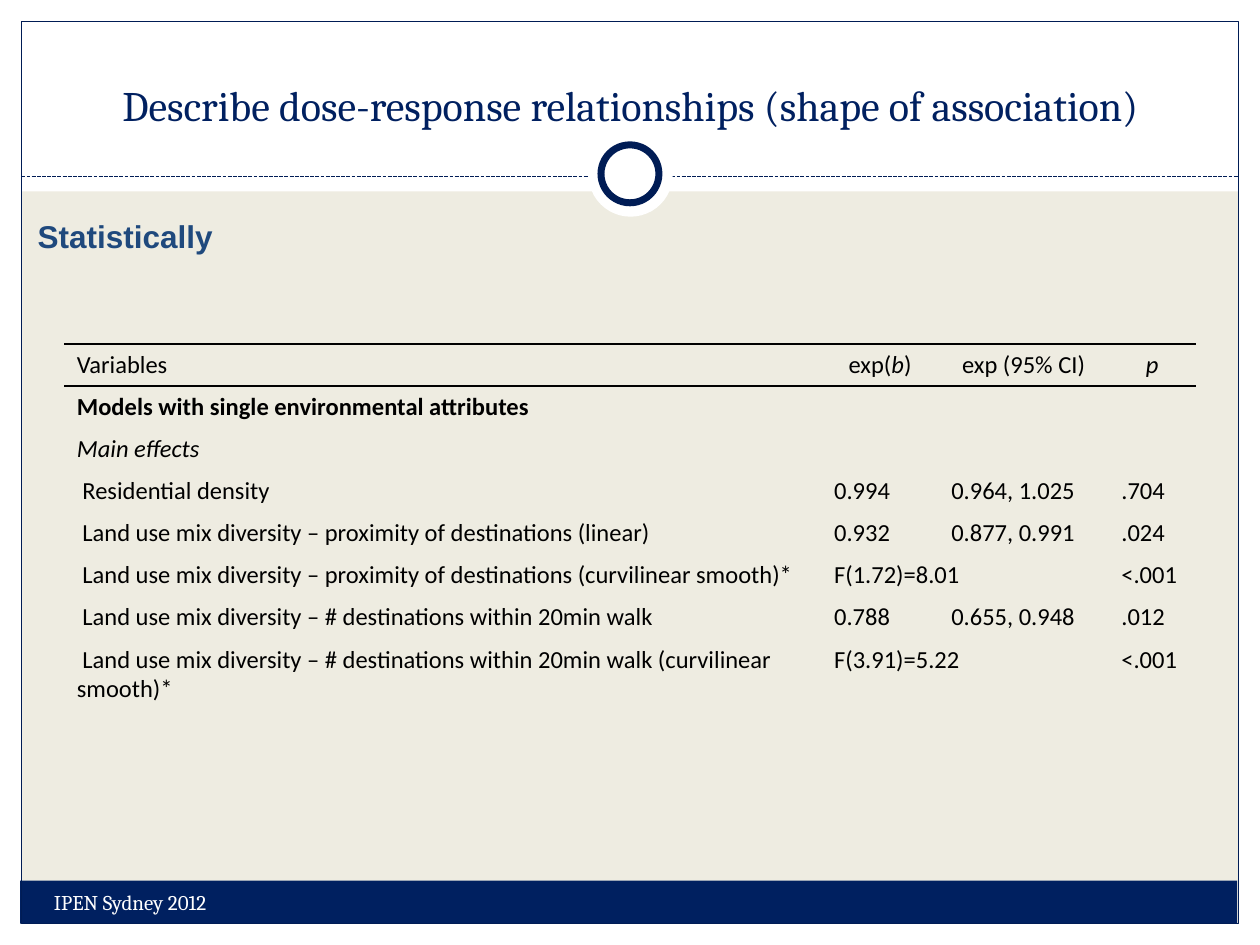
from lxml import etree
from pptx import Presentation
from pptx.dml.color import RGBColor
from pptx.enum.dml import MSO_LINE
from pptx.enum.shapes import MSO_CONNECTOR, MSO_SHAPE
from pptx.enum.text import MSO_ANCHOR, PP_ALIGN
from pptx.oxml.ns import qn
from pptx.util import Inches, Pt

RECT, OVAL = MSO_SHAPE.RECTANGLE, MSO_SHAPE.OVAL
STRAIGHT, DASH = MSO_CONNECTOR.STRAIGHT, MSO_LINE.SQUARE_DOT
LEFT, CENTER = PP_ALIGN.LEFT, PP_ALIGN.CENTER
TOP, BOTTOM = MSO_ANCHOR.TOP, MSO_ANCHOR.BOTTOM

COLORS = {
    "paper": "EEECE1",
    "white": "FFFFFF",
    "navy": "002060",
    "frame": "001C55",
    "heading": "1F497D",
    "black": "000000",
}

COL_WIDTHS = [6.01, 0.93, 1.35, 0.69]
ROW_HEIGHTS = [0.33] * 7 + [0.57]
HEADER = ["Variables", "exp(b)", "exp (95% CI)", "p"]
ROWS = [
    ["Models with single environmental attributes", "", "", ""],
    ["Main effects", "", "", ""],
    [" Residential density", "0.994", "0.964, 1.025", ".704"],
    [" Land use mix diversity – proximity of destinations (linear)",
     "0.932", "0.877, 0.991", ".024"],
    [" Land use mix diversity – proximity of destinations (curvilinear smooth)*",
     "F(1.72)=8.01", "", "<.001"],
    [" Land use mix diversity – # destinations within 20min walk",
     "0.788", "0.655, 0.948", ".012"],
    [" Land use mix diversity – # destinations within 20min walk (curvilinear smooth)*",
     "F(3.91)=5.22", "", "<.001"],
]


def rgb(name):
    return RGBColor.from_string(COLORS[name])


def add_shape(s, kind, box, fill=None, line=None, width=0.75):
    sp = s.shapes.add_shape(kind, *map(Inches, box))
    sp.shadow.inherit = False
    if fill:
        sp.fill.solid()
        sp.fill.fore_color.rgb = rgb(fill)
    else:
        sp.fill.background()
    if line:
        sp.line.color.rgb = rgb(line)
        sp.line.width = Pt(width)
    else:
        sp.line.fill.background()


def add_dashed_line(s, x1, x2, y):
    line = s.shapes.add_connector(STRAIGHT, Inches(x1), Inches(y), Inches(x2), Inches(y))
    line.line.color.rgb = rgb("frame")
    line.line.width = Pt(0.75)
    line.line.dash_style = DASH
    etree.SubElement(line._element.spPr, qn("a:effectLst"))


def format_run(r, size, font, color, bold=False, italic=False):
    r.font.size = Pt(size)
    r.font.name = font
    r.font.color.rgb = rgb(color)
    r.font.bold = bold
    r.font.italic = italic


def add_text(s, box, text, size, font, color, bold=False, align=LEFT, anchor=TOP):
    tf = s.shapes.add_textbox(*map(Inches, box)).text_frame
    tf.word_wrap = True
    tf.vertical_anchor = anchor
    tf.text = text
    p = tf.paragraphs[0]
    p.alignment = align
    format_run(p.runs[0], size, font, color, bold)


def set_borders(cell, ruled):
    tcPr = cell._tc.get_or_add_tcPr()
    for i, side in enumerate(("L", "R", "T", "B")):
        ln = etree.Element(qn(f"a:ln{side}"), w=str(Pt(1)))
        if side in ruled:
            fill = etree.SubElement(ln, qn("a:solidFill"))
            etree.SubElement(fill, qn("a:srgbClr"), val=COLORS["black"])
        else:
            etree.SubElement(ln, qn("a:noFill"))
        tcPr.insert(i, ln)


def fill_cell(cell, parts, align=LEFT, bold=False, italics=()):
    p = cell.text_frame.paragraphs[0]
    p.alignment = align
    for part in parts:
        r = p.add_run()
        r.text = part
        format_run(r, 14, "Calibri", "black", bold, part in italics)


def add_results_table(s):
    shape = s.shapes.add_table(len(ROW_HEIGHTS), len(COL_WIDTHS), Inches(0.51), Inches(2.73),
                               Inches(sum(COL_WIDTHS)), Inches(sum(ROW_HEIGHTS)))
    table = shape.table
    table.first_row = table.horz_banding = False
    for col, width in zip(table.columns, COL_WIDTHS):
        col.width = Inches(width)
    for row, height in zip(table.rows, ROW_HEIGHTS):
        row.height = Inches(height)

    for i, values in enumerate([HEADER] + ROWS):
        for j, text in enumerate(values):
            cell = table.cell(i, j)
            cell.fill.background()
            set_borders(cell, {0: "TB", 1: "T"}.get(i, ""))
            margin = 0.05 if text else 0
            cell.margin_top = cell.margin_bottom = Inches(margin)
            if not text:
                continue
            parts = ["exp(", "b", ")"] if text == "exp(b)" else [text]
            align = CENTER if i == 0 and j else LEFT
            fill_cell(cell, parts, align, bold=i == 1, italics=("b", "p", "Main effects"))
        if values[1].startswith("F("):
            table.cell(i, 1).merge(table.cell(i, 2))


def add_frame(s):
    for box in ((0, 7.33, 10, 0.17), (0, 0, 10, 1.52), (0, 0, 0.17, 7.5), (9.83, 0, 0.17, 7.5)):
        add_shape(s, RECT, box, "white")
    add_shape(s, RECT, (0.16, 6.99, 9.66, 0.34), "navy")
    add_shape(s, RECT, (0.17, 0.17, 9.66, 7.16), line="frame")
    add_dashed_line(s, 0.17, 9.83, 1.4)
    add_shape(s, OVAL, (4.67, 1.05, 0.67, 0.67), "white")
    add_shape(s, OVAL, (4.77, 1.15, 0.46, 0.46), "white", "frame", 4)


def main():
    prs = Presentation()
    prs.slide_width, prs.slide_height = Inches(10), Inches(7.5)
    s = prs.slides.add_slide(prs.slide_layouts[6])
    s.background.fill.solid()
    s.background.fill.fore_color.rgb = rgb("paper")
    add_frame(s)
    add_text(s, (0.5, 0.28, 9.08, 0.8),
             "Describe dose-response relationships (shape of association) ",
             24, "Cambria", "navy", align=CENTER, anchor=BOTTOM)
    add_text(s, (0.2, 1.67, 3.05, 0.4), "Statistically", 18, "Arial", "heading", bold=True)
    add_results_table(s)
    add_text(s, (0.33, 7.01, 3.92, 0.4), "IPEN Sydney 2012", 12, "Cambria", "white")
    prs.save("out.pptx")


if __name__ == "__main__":
    main()
